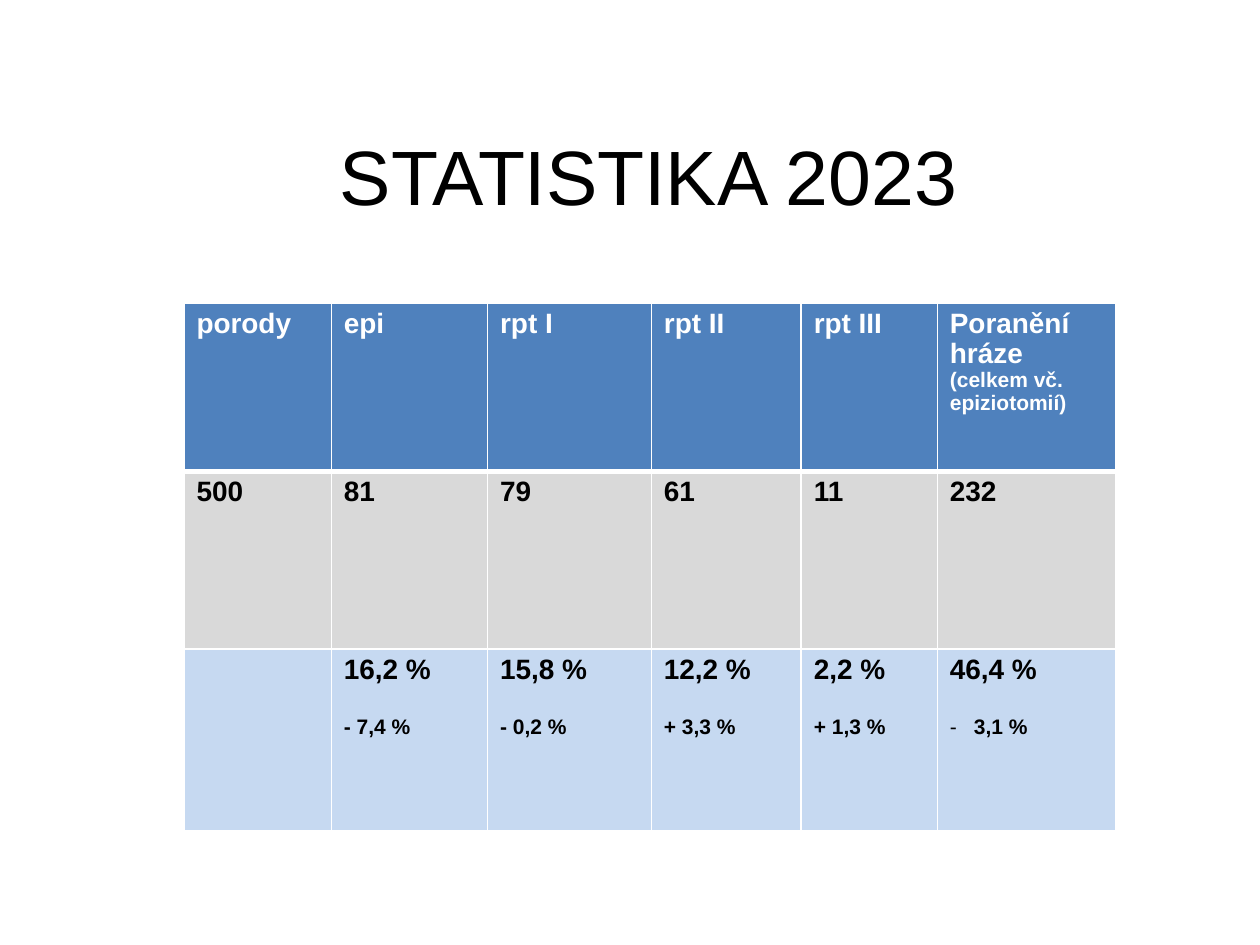
from dataclasses import dataclass

from lxml.etree import SubElement
from pptx import Presentation
from pptx.dml.color import RGBColor
from pptx.enum.text import MSO_ANCHOR, PP_ALIGN
from pptx.oxml.ns import qn
from pptx.util import Inches, Pt


@dataclass(frozen=True)
class Theme:
    font: str = "Arial"
    white: str = "FFFFFF"
    black: str = "000000"
    row_fills: tuple = ("4F81BD", "D9D9D9", "C6D9F1")
    title_size: int = 44
    body_size: int = 16
    small_size: int = 12
    thin_border: float = 0.96
    thick_border: float = 3


THEME = Theme()


def add_run(paragraph, text, size, color, bold=True):
    run = paragraph.add_run()
    run.text = text
    run.font.name = THEME.font
    run.font.size = Pt(size)
    run.font.bold = bold
    run.font.color.rgb = RGBColor.from_string(color)


def add_border(cell, side, width):
    """Draw one white edge; side is L, R, T or B."""
    properties = cell._tc.get_or_add_tcPr()
    line = SubElement(properties, qn(f"a:ln{side}"), w=str(Pt(width)))
    fill = SubElement(line, qn("a:solidFill"))
    SubElement(fill, qn("a:srgbClr"), val=THEME.white)


presentation = Presentation()
presentation.slide_width = Inches(10)
presentation.slide_height = Inches(7.5)
slide = presentation.slides.add_slide(presentation.slide_layouts[6])

# Title
title = slide.shapes.add_textbox(Inches(0.9), Inches(-0.74), Inches(8.5), Inches(4.25))
frame = title.text_frame
frame.word_wrap = True
frame.vertical_anchor = MSO_ANCHOR.MIDDLE
frame.margin_left = frame.margin_right = frame.margin_top = frame.margin_bottom = 0
paragraph = frame.paragraphs[0]
paragraph.alignment = PP_ALIGN.CENTER
add_run(paragraph, "STATISTIKA 2023", THEME.title_size, THEME.black, bold=False)

# Table: each cell holds a main line and, where needed, a small second line
column_widths = [1.17, 1.24, 1.3, 1.19, 1.08, 1.42]
row_heights = [1.33, 1.41, 1.44]
rows = [
    [("porody",), ("epi",), ("rpt I",), ("rpt II",), ("rpt III",),
     ("Poranění hráze", "(celkem vč. epiziotomií)")],
    [("500",), ("81",), ("79",), ("61",), ("11",), ("232",)],
    [(), ("16,2 %", "- 7,4 %"), ("15,8 %", "- 0,2 %"), ("12,2 %", "+ 3,3 %"),
     ("2,2 %", "+ 1,3 %"), ("46,4 %", "3,1 %")],
]
table = slide.shapes.add_table(
    len(rows), len(column_widths), Inches(1.46), Inches(2.41),
    Inches(sum(column_widths)), Inches(sum(row_heights))).table
for column, width in zip(table.columns, column_widths):
    column.width = Inches(width)
for row, height in zip(table.rows, row_heights):
    row.height = Inches(height)

for row_index, row in enumerate(rows):
    is_header = row_index == 0
    is_percent = row_index == len(rows) - 1
    text_color = THEME.white if is_header else THEME.black
    border_widths = {
        "L": THEME.thin_border,
        "R": THEME.thin_border,
        "T": THEME.thick_border if row_index == 1 else THEME.thin_border,
        "B": THEME.thick_border if is_header else THEME.thin_border,
    }
    for column_index, lines in enumerate(row):
        cell = table.cell(row_index, column_index)
        for side, width in border_widths.items():
            add_border(cell, side, width)
        cell.fill.solid()
        cell.fill.fore_color.rgb = RGBColor.from_string(THEME.row_fills[row_index])
        for line_index, text in enumerate(lines):
            frame = cell.text_frame
            paragraph = frame.add_paragraph() if line_index else frame.paragraphs[0]
            paragraph.line_spacing = 0.96
            if is_percent and line_index:
                paragraph.space_before = Pt(17.7)
            size = THEME.small_size if line_index else THEME.body_size
            add_run(paragraph, text, size, text_color)

# The change in the last cell is a dash-bulleted item
change = table.cell(len(rows) - 1, len(column_widths) - 1).text_frame.paragraphs[1]
properties = change._p.get_or_add_pPr()
properties.set("marL", str(Inches(0.19)))
properties.set("indent", str(Inches(-0.19)))
bullet_color = SubElement(properties, qn("a:buClr"))
SubElement(bullet_color, qn("a:srgbClr"), val=THEME.black)
SubElement(properties, qn("a:buFont"), typeface=THEME.font)
SubElement(properties, qn("a:buChar"), char="-")

presentation.save("out.pptx")
